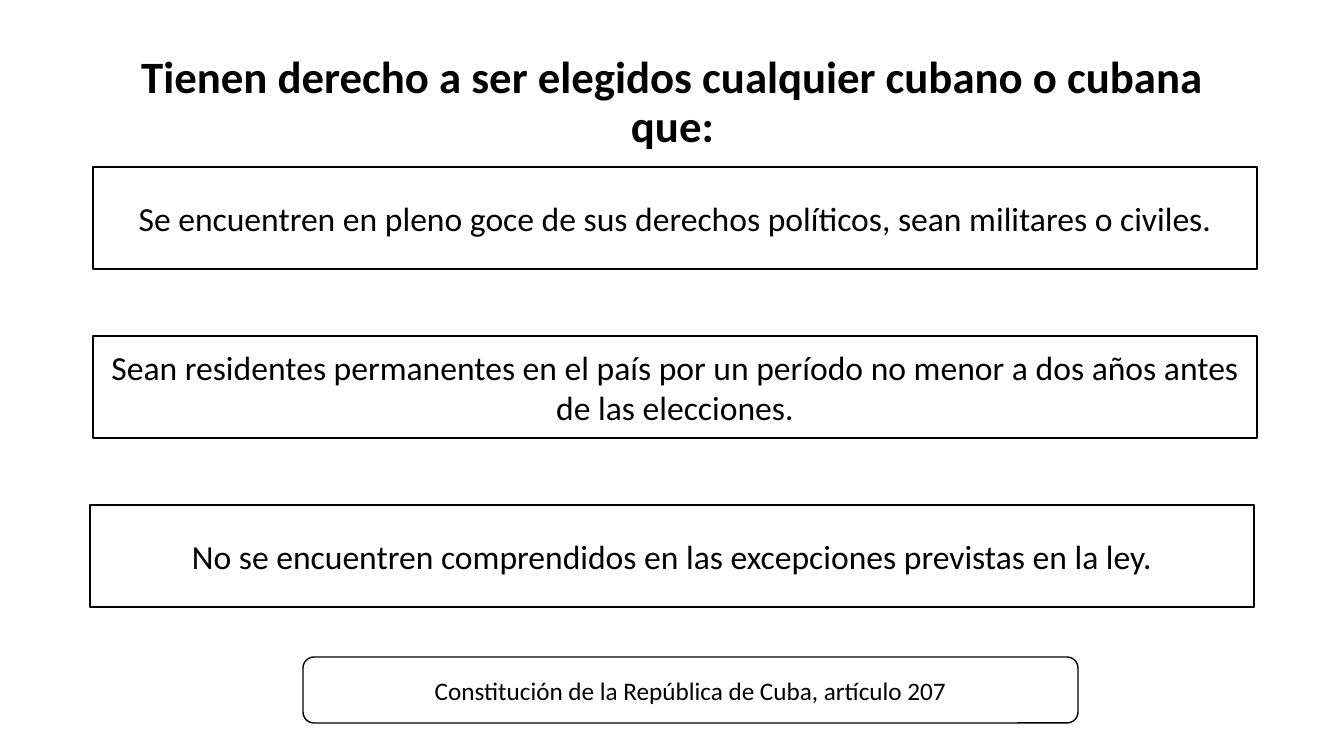
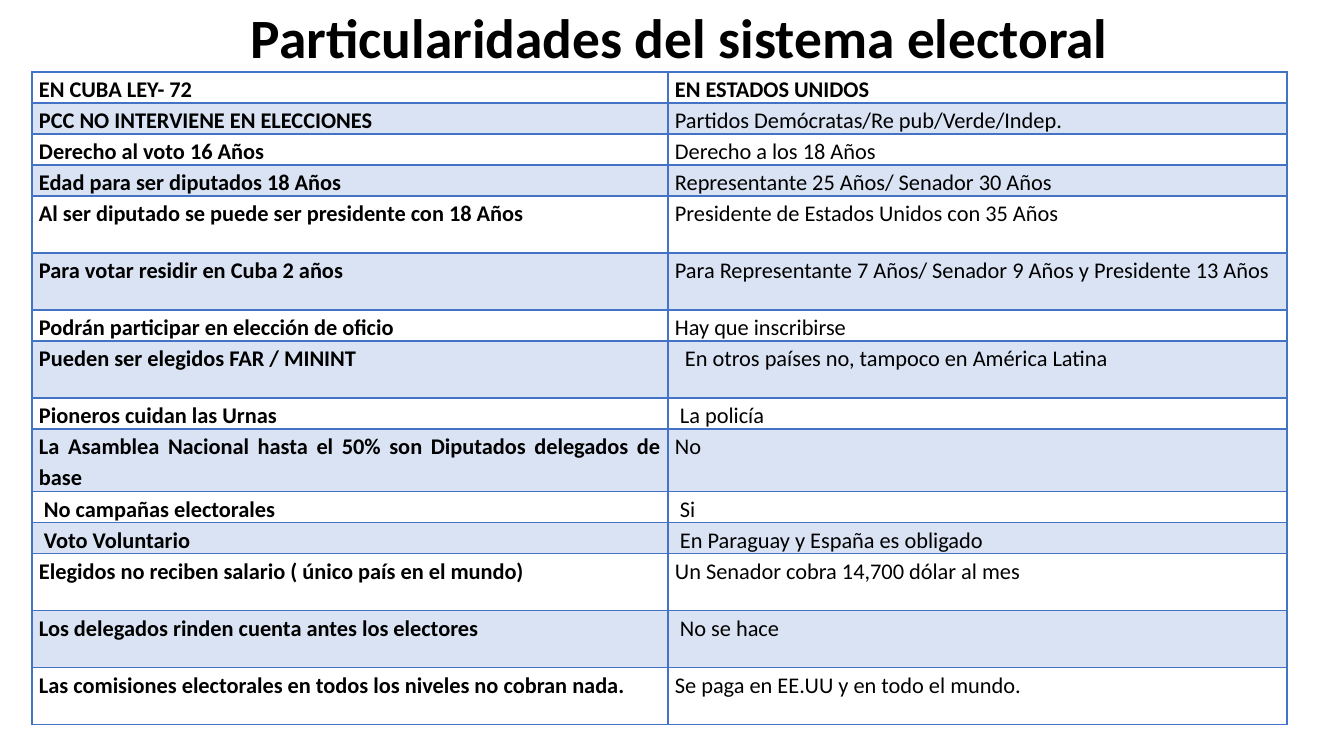
import pptx
import pptx.dml.color
import pptx.enum.shapes
import pptx.enum.text
import pptx.oxml.ns
import pptx.util
from lxml import etree

PX = 914400 / 100.8
FONT = "Calibri"
COLORS = {"ink": "000000", "paper": "FFFFFF", "band": "DAE3F3", "grid": "4472C4"}

RIGHTS_TITLE = "Tienen derecho a ser elegidos cualquier cubano o cubana que:"
REQUIREMENTS = [
    (93, "Se encuentren en pleno goce de sus derechos políticos, sean militares o civiles."),
    (93, "Sean residentes permanentes en el país por un período no menor a dos años antes de las elecciones."),
    (90, "No se encuentren comprendidos en las excepciones previstas en la ley."),
]
SOURCE = "Constitución de la República de Cuba, artículo 207"

SYSTEM_TITLE = "Particularidades del sistema electoral"
COLUMN_WIDTHS = (636, 619)
LOW, HIGH, DOUBLE = 31, 57, 63
COMPARISON = [
    (LOW, "EN CUBA LEY- 72", "EN ESTADOS UNIDOS"),
    (LOW, "PCC NO INTERVIENE EN ELECCIONES", "Partidos Demócratas/Re pub/Verde/Indep."),
    (LOW, "Derecho al voto 16 Años", "Derecho a los 18 Años"),
    (LOW, "Edad para ser diputados 18 Años", "Representante 25 Años/ Senador 30 Años"),
    (HIGH, "Al ser diputado se puede ser presidente con 18 Años", "Presidente de Estados Unidos con 35 Años"),
    (HIGH, "Para votar residir en Cuba 2 años", "Para Representante 7 Años/ Senador 9 Años y Presidente 13 Años"),
    (LOW, "Podrán participar en elección de oficio", "Hay que inscribirse"),
    (HIGH, "Pueden ser elegidos FAR / MININT", "En otros países no, tampoco en América Latina"),
    (LOW, "Pioneros cuidan las Urnas", "La policía"),
    (DOUBLE, "La Asamblea Nacional hasta el 50% son Diputados delegados de base", "No"),
    (LOW, "No campañas electorales", "Si"),
    (LOW, "Voto Voluntario", "En Paraguay y España es obligado"),
    (HIGH, "Elegidos no reciben salario ( único país en el mundo)", "Un Senador cobra 14,700 dólar al mes"),
    (HIGH, "Los delegados rinden cuenta antes los electores", "No se hace"),
    (HIGH, "Las comisiones electorales en todos los niveles no cobran nada.", "Se paga en EE.UU y en todo el mundo."),
]
INDENTS = {(7, 1): 10, (8, 1): 5, (10, 0): 5, (10, 1): 5, (11, 0): 5, (11, 1): 5, (13, 1): 5}

ALIGN = pptx.enum.text.PP_ALIGN
ANCHOR = pptx.enum.text.MSO_ANCHOR
SHAPE = pptx.enum.shapes.MSO_SHAPE


def px(n):
    return pptx.util.Emu(round(n * PX))


def color(name):
    return pptx.dml.color.RGBColor.from_string(COLORS[name])


def write(tf, text, size, bold=False, align=ALIGN.CENTER, spacing=1.0):
    p = tf.paragraphs[0]
    p.text = text
    p.alignment = align
    p.line_spacing = spacing
    p.font.name = FONT
    p.font.size = pptx.util.Pt(size)
    p.font.bold = bold
    p.font.color.rgb = color("ink")


def add_title(s, text, box, size):
    tf = s.shapes.add_textbox(*map(px, box)).text_frame
    tf.word_wrap = True
    tf.vertical_anchor = ANCHOR.MIDDLE
    write(tf, text, size, bold=True, spacing=0.9)


def add_box(s, kind, text, box, size):
    sp = s.shapes.add_shape(kind, *map(px, box))
    sp.shadow.inherit = False
    sp.fill.solid()
    sp.fill.fore_color.rgb = color("paper")
    sp.line.color.rgb = color("ink")
    sp.line.width = pptx.util.Pt(1)
    tf = sp.text_frame
    tf.word_wrap = True
    tf.vertical_anchor = ANCHOR.MIDDLE
    write(tf, text, size)


def set_borders(cell, widths):
    qn = pptx.oxml.ns.qn
    tc_pr = cell._tc.get_or_add_tcPr()
    for side, width in widths.items():
        ln = etree.SubElement(tc_pr, qn("a:ln" + side), w=str(pptx.util.Pt(width)))
        fill = etree.SubElement(ln, qn("a:solidFill"))
        etree.SubElement(fill, qn("a:srgbClr"), val=COLORS["grid"])


def add_comparison(s, left, top):
    heights = [row[0] for row in COMPARISON]
    frame = s.shapes.add_table(len(COMPARISON), len(COLUMN_WIDTHS), px(left), px(top),
                               px(sum(COLUMN_WIDTHS)), px(sum(heights)))
    table = frame.table
    table.first_row = table.horz_banding = False
    for column, width in zip(table.columns, COLUMN_WIDTHS):
        column.width = px(width)
    for i, (height, *texts) in enumerate(COMPARISON):
        table.rows[i].height = px(height)
        for j, text in enumerate(texts):
            cell = table.cell(i, j)
            set_borders(cell, {"L": 1, "R": 1, "T": 2 if i == 1 else 1, "B": 2 if i == 0 else 1})
            cell.fill.solid()
            cell.fill.fore_color.rgb = color("band" if i % 2 else "paper")
            cell.margin_left = px(7 + INDENTS.get((i, j), 0))
            cell.margin_right = px(7)
            cell.margin_top = cell.margin_bottom = 0
            write(cell.text_frame, text, 16, bold=i == 0 or j == 0, align=ALIGN.JUSTIFY, spacing=1.15)


def main():
    prs = pptx.Presentation()
    prs.slide_width, prs.slide_height = px(1344), px(756)
    blank = prs.slide_layouts[6]

    s = prs.slides.add_slide(blank)
    add_title(s, RIGHTS_TITLE, (93, 40, 1159, 127), 32)
    for i, (left, text) in enumerate(REQUIREMENTS):
        add_box(s, SHAPE.RECTANGLE, text, (left, 167 + 169 * i, 1164, 102), 24)
    add_box(s, SHAPE.ROUNDED_RECTANGLE, SOURCE, (303, 657, 775, 66), 18)

    s = prs.slides.add_slide(blank)
    add_title(s, SYSTEM_TITLE, (100, 23, 1159, 35), 39.6)
    add_comparison(s, 32, 72)

    prs.save("out.pptx")


if __name__ == "__main__":
    main()
